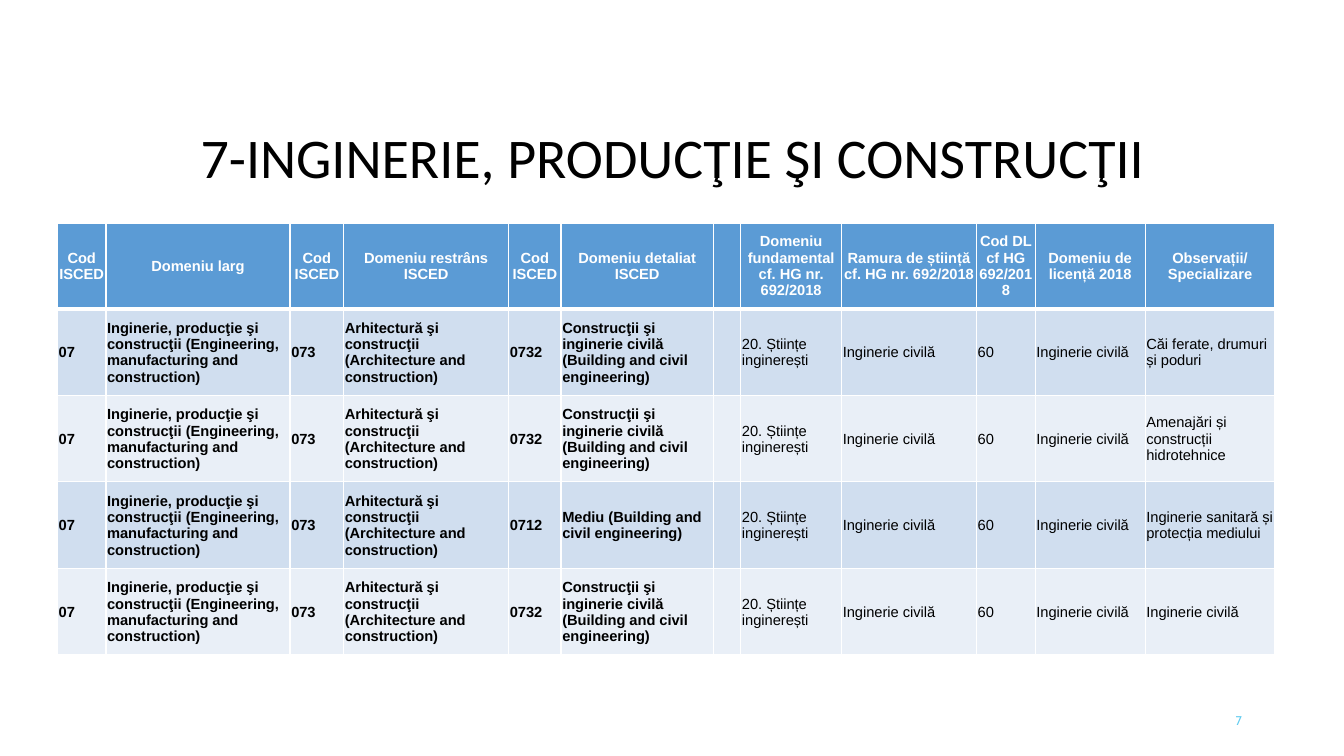
from lxml import etree
from pptx import Presentation
from pptx.dml.color import RGBColor
from pptx.enum.text import MSO_ANCHOR, PP_ALIGN
from pptx.oxml.ns import qn
from pptx.util import Cm, Pt

LEFT, CENTER, RIGHT, JUSTIFY = PP_ALIGN.LEFT, PP_ALIGN.CENTER, PP_ALIGN.RIGHT, PP_ALIGN.JUSTIFY
MIDDLE = MSO_ANCHOR.MIDDLE

COLORS = {"text": "000000", "white": "FFFFFF", "header": "5B9BD5",
          "odd": "D0DEEF", "even": "E9EFF7", "number": "5FCBEF"}

TITLE = "7-INGINERIE, PRODUCŢIE ŞI CONSTRUCŢII"
PAGE_NUMBER = "7"
COLUMNS = [
    ("Cod ISCED", 1.22),
    ("Domeniu larg", 4.64),
    ("Cod ISCED", 1.35),
    ("Domeniu restrâns ISCED", 4.16),
    ("Cod ISCED", 1.32),
    ("Domeniu detaliat ISCED", 3.84),
    ("", 0.69),
    ("Domeniu fundamental cf. HG nr. 692/2018", 2.54),
    ("Ramura de știință cf. HG nr. 692/2018", 3.4),
    ("Cod DL cf HG 692/2018", 1.48),
    ("Domeniu de licență 2018", 2.77),
    ("Observații/ Specializare", 3.27),
]
BROAD = ["07", "Inginerie, producţie şi construcţii (Engineering, manufacturing and construction)",
         "073", "Arhitectură şi construcţii (Architecture and construction)"]
LICENCE = ["", "20. Științe inginerești", "Inginerie civilă", "60", "Inginerie civilă"]
CIVIL = ("0732", "Construcţii şi inginerie civilă (Building and civil engineering)")
ENVIRONMENT = ("0712", "Mediu (Building and civil engineering)")
PROGRAMMES = [
    (CIVIL, "Căi ferate, drumuri și poduri"),
    (CIVIL, "Amenajări și construcții hidrotehnice"),
    (ENVIRONMENT, "Inginerie sanitară și protecția mediului"),
    (CIVIL, "Inginerie civilă"),
]
DETAIL_CODE_COLUMN = 4
BOLD_COLUMNS = 6
HEADER_HEIGHT, ROW_HEIGHT = 2.14, 2.18


def write(frame, text, font="Arial", size=10.5, color="text", bold=False, align=LEFT, spacing=1.0):
    frame.word_wrap = True
    para = frame.paragraphs[0]
    para.alignment = align
    para.line_spacing = spacing
    para.font.size = Pt(size)
    if text:
        span = para.add_run()
        span.text = text
        span.font.name = font
        span.font.size = Pt(size)
        span.font.bold = bold
        span.font.color.rgb = RGBColor.from_string(COLORS[color])


def add_text(page, text, left, top, width, height, **style):
    box = page.shapes.add_textbox(Cm(left), Cm(top), Cm(width), Cm(height))
    box.text_frame.vertical_anchor = MIDDLE
    write(box.text_frame, text, **style)


def format_cell(cell, fill, inset, bottom_line):
    cell.vertical_anchor = MIDDLE
    cell.margin_left = cell.margin_right = cell.margin_top = Cm(inset)
    cell.margin_bottom = Cm(0)
    properties = cell._tc.get_or_add_tcPr()
    for side, width in (("L", 1), ("R", 1), ("T", 1), ("B", bottom_line)):
        line = etree.SubElement(properties, qn(f"a:ln{side}"), w=str(Pt(width)))
        solid = etree.SubElement(line, qn("a:solidFill"))
        etree.SubElement(solid, qn("a:srgbClr"), val=COLORS["white"])
    cell.fill.solid()
    cell.fill.fore_color.rgb = RGBColor.from_string(COLORS[fill])


def add_programme_table(page):
    widths = [width for _, width in COLUMNS]
    heights = [HEADER_HEIGHT] + [ROW_HEIGHT] * len(PROGRAMMES)
    table = page.shapes.add_table(len(heights), len(widths), Cm(1.45), Cm(5.64),
                                  Cm(sum(widths)), Cm(sum(heights))).table
    table.horz_banding = False
    for column, width in zip(table.columns, widths):
        column.width = Cm(width)
    for row, height in zip(table.rows, heights):
        row.height = Cm(height)

    for index, (heading, _) in enumerate(COLUMNS):
        cell = table.cell(0, index)
        format_cell(cell, "header", inset=0, bottom_line=3)
        write(cell.text_frame, heading, color="white", bold=True, align=CENTER)

    for number, (detail, remark) in enumerate(PROGRAMMES, start=1):
        for index, text in enumerate([*BROAD, *detail, *LICENCE, remark]):
            cell = table.cell(number, index)
            format_cell(cell, "odd" if number % 2 else "even", inset=0.03, bottom_line=1)
            write(cell.text_frame, text, bold=index < BOLD_COLUMNS,
                  align=JUSTIFY if index == DETAIL_CODE_COLUMN else LEFT)


def main():
    """Build the slide listing the engineering study programmes."""
    deck = Presentation()
    deck.slide_width, deck.slide_height = Cm(33.87), Cm(19.05)
    page = deck.slides.add_slide(deck.slide_layouts[6])
    add_text(page, TITLE, 2.34, 3.12, 29.21, 1.83,
             font="Calibri", size=40, align=CENTER, spacing=0.9)
    add_programme_table(page)
    add_text(page, PAGE_NUMBER, 23.93, 17.65, 7.62, 1.02,
             font="Cabin", size=9, color="number", align=RIGHT)
    deck.save("out.pptx")


if __name__ == "__main__":
    main()
